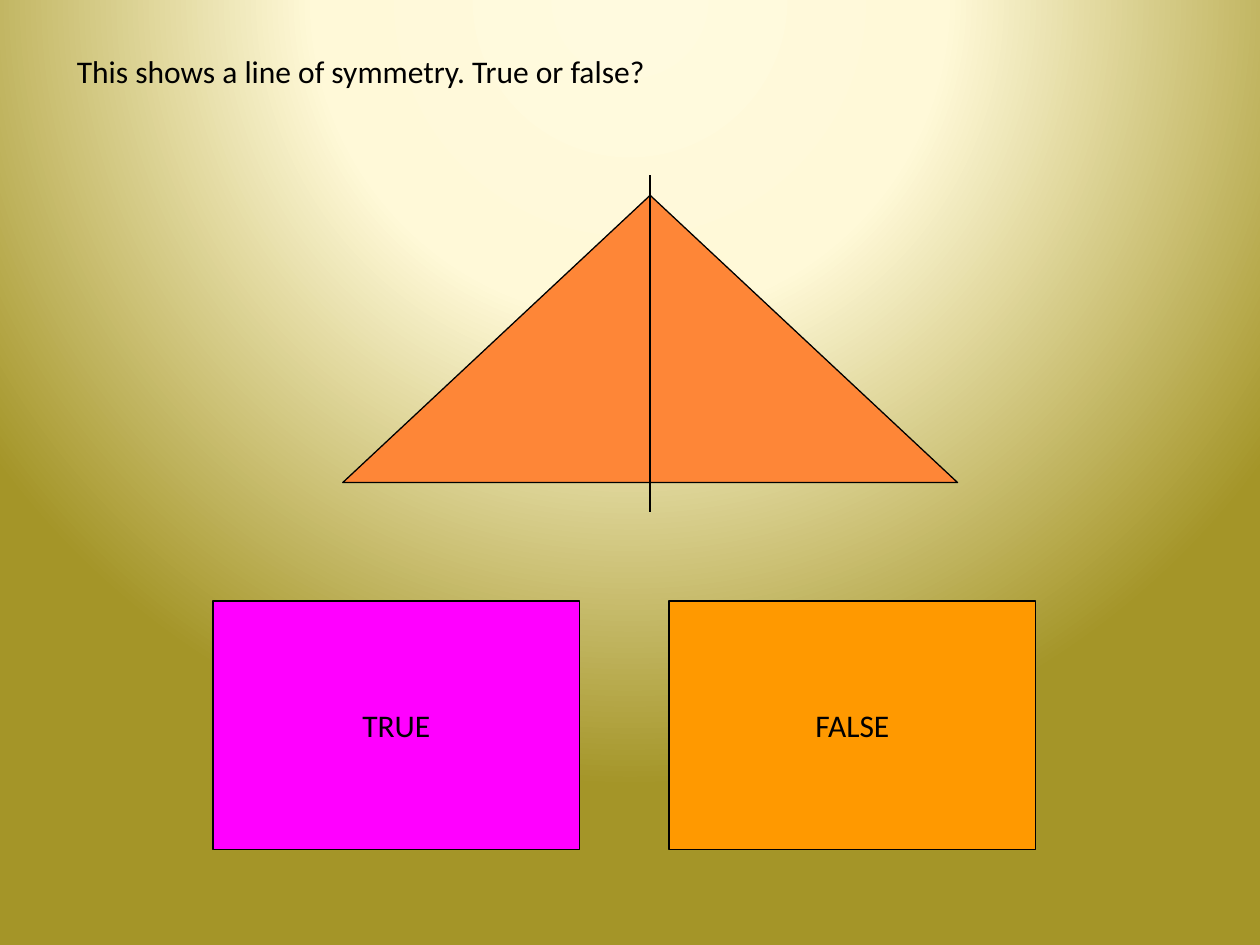
from lxml.etree import SubElement
from pptx import Presentation
from pptx.dml.color import RGBColor
from pptx.enum.shapes import MSO_CONNECTOR, MSO_SHAPE
from pptx.enum.text import MSO_ANCHOR, PP_ALIGN
from pptx.oxml import parse_xml
from pptx.oxml.ns import nsdecls, qn
from pptx.util import Pt


def paint(color, code):
    """Set a colour from a hex string."""
    color.rgb = RGBColor.from_string(code)


def shade(slide, stops):
    """Fill the background with a round gradient centred above the slide."""
    slide.background.fill.gradient()
    grad = slide.element.find(".//" + qn("a:gradFill"))
    marks = "".join(
        f'<a:gs pos="{pos * 1000}"><a:srgbClr val="{code}"/></a:gs>'
        for pos, code in stops
    )
    new = parse_xml(
        f'<a:gradFill {nsdecls("a")} rotWithShape="1"><a:gsLst>{marks}</a:gsLst>'
        '<a:path path="circle"><a:fillToRect l="50000" t="-80000" '
        'r="50000" b="180000"/></a:path></a:gradFill>'
    )
    grad.getparent().replace(grad, new)


def write(shape, text, align, anchor, wrap):
    """Put one line of black text in a shape."""
    frame = shape.text_frame
    frame.text = text
    frame.word_wrap = wrap
    frame.vertical_anchor = anchor
    para = frame.paragraphs[0]
    para.alignment = align
    font = para.runs[0].font
    font.name = "Calibri"
    font.size = Pt(18)
    paint(font.color, "000000")


def ink(line):
    """Give a line its thin black stroke."""
    line.width = Pt(0.75)
    paint(line.color, "000000")


def add_title(slide, text):
    """Place the question in the title placeholder."""
    title = slide.shapes.title
    title.left, title.top = Pt(36.72), Pt(25.92)
    title.width, title.height = Pt(493.2), Pt(28.8)
    write(title, text, PP_ALIGN.LEFT, MSO_ANCHOR.TOP, True)


def add_form(slide, kind, left, top, width, height, fill):
    """Draw a filled shape with a black outline."""
    form = slide.shapes.add_shape(kind, Pt(left), Pt(top), Pt(width), Pt(height))
    form.shadow.inherit = False
    form.fill.solid()
    paint(form.fill.fore_color, fill)
    ink(form.line)
    return form


def add_line(slide, x, low, high):
    """Draw an upright line."""
    line = slide.shapes.add_connector(
        MSO_CONNECTOR.STRAIGHT, Pt(x), Pt(low), Pt(x), Pt(high)
    )
    ink(line.line)
    SubElement(line._element.spPr, qn("a:effectLst"))


def main():
    """Build the symmetry question slide."""
    deck = Presentation()
    deck.slide_width, deck.slide_height = Pt(720), Pt(540)
    slide = deck.slides.add_slide(deck.slide_layouts[5])
    shade(slide, [(0, "FFFADF"), (40, "FFF9D8"), (100, "A49528")])
    add_title(slide, "This shows a line of symmetry. True or false?")
    answers = [("TRUE", 121.68, "FF00FF"), ("FALSE", 382.32, "FF9900")]
    for text, left, fill in answers:
        box = add_form(slide, MSO_SHAPE.RECTANGLE, left, 343.44, 209.52, 141.84, fill)
        write(box, text, PP_ALIGN.CENTER, MSO_ANCHOR.MIDDLE, False)
    left, width = 195.84, 351.36
    add_form(slide, MSO_SHAPE.ISOSCELES_TRIANGLE, left, 111.6, width, 164.16, "FE8637")
    add_line(slide, left + width / 2, 292.32, 100.08)
    deck.save("out.pptx")


if __name__ == "__main__":
    main()
